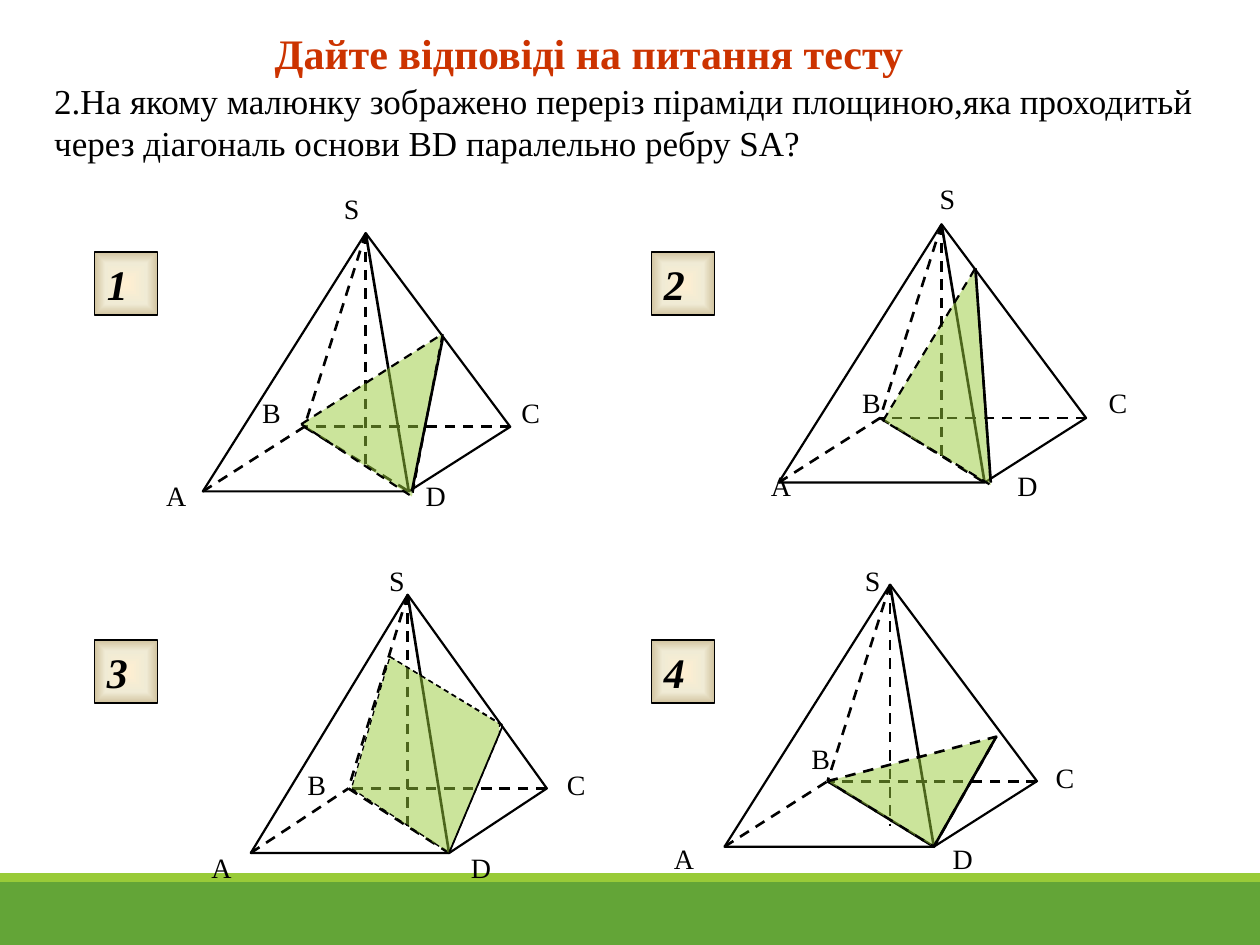
import lxml.etree
import pptx
import pptx.dml.color
import pptx.enum.dml
import pptx.enum.shapes
import pptx.enum.text
import pptx.oxml
import pptx.oxml.ns
import pptx.util

RGBColor = pptx.dml.color.RGBColor
Pt = pptx.util.Pt
qn = pptx.oxml.ns.qn
BLACK = RGBColor(0x00, 0x00, 0x00)
RED = RGBColor(0xCC, 0x33, 0x00)
GREEN = RGBColor(0x63, 0xA5, 0x37)
LIME = RGBColor(0x99, 0xCB, 0x38)
BUTTON_STOPS = (
    (0, RGBColor(0xFF, 0xEF, 0xD1)),
    (65000, RGBColor(0xF0, 0xEB, 0xD5)),
    (100000, RGBColor(0xD1, 0xC3, 0x9F)),
)
FONT = "Times New Roman"
DASH = pptx.enum.dml.MSO_LINE.DASH
WIDTH, HEIGHT = pptx.util.Inches(10), pptx.util.Inches(7.5)
COL, ROW = WIDTH / 100, HEIGHT / 75

VERTICES = {"A": (0, 1), "B": (0.33, 0.75), "C": (1, 0.75),
            "D": (0.67, 1), "S": (0.53, 0), "O": (0.53, 0.92)}
HIDDEN_EDGES = ("SB", "CB", "AB", "BD", "SO")
LABELS = {"A": (0, 1), "B": (0.27, 0.71), "C": (1, 0.71), "D": (0.73, 1), "S": (0.5, 0)}

FIGURES = [
    {"number": "1", "button": (7.5, 20), "box": (16.1, 18.5, 24.4, 20.5),
     "labels": (12.2, 14.7, 28.2, 22.8), "outline": 1.25,
     "section": [(0.32, 0.74), (0.78, 0.39), (0.68, 1.02)],
     "edges": [((0.68, 1), (0.78, 0.41), 1.5, None)]},
    {"number": "2", "button": (51.7, 20), "box": (61.8, 17.8, 24.4, 20.5),
     "labels": (60.2, 13.9, 26.8, 22.8), "outline": 1.25,
     "section": [(0.34, 0.76), (0.64, 0.17), (0.69, 1.01)],
     "edges": [((0.69, 1), (0.64, 0.17), 1.5, None)]},
    {"number": "3", "button": (7.5, 50.8), "box": (19.9, 47.2, 23.5, 20.5),
     "labels": (15.8, 44.2, 28.2, 22.8), "outline": 0,
     "section": [(0.47, 0.24), (0.84, 0.5), (0.84, 0.54), (0.67, 1), (0.34, 0.75)],
     "edges": [((0.67, 1), (0.85, 0.51), 1, None),
               ((0.47, 0.24), (0.86, 0.51), 0.75, DASH)]},
    {"number": "4", "button": (51.7, 50.8), "box": (57.5, 46.4, 24.8, 20.8),
     "labels": (52.5, 44.2, 30.3, 22.1), "outline": 1.5, "moved": {"B": (0.36, 0.64)},
     "section": [(0.33, 0.75), (0.87, 0.58), (0.67, 1)],
     "edges": [((0.67, 1), (0.87, 0.58), 1.5, None)]},
]


def place(x, y, w, h):
    return [round(v) for v in (x * COL, y * ROW, w * COL, h * ROW)]


def point(box, share):
    x, y, w, h = box
    return round(x + w * share[0]), round(y + h * share[1])


def write(tf, text, size, color=BLACK, bold=False, italic=False):
    p = tf.paragraphs[0]
    p.text = text
    p.alignment = pptx.enum.text.PP_ALIGN.LEFT
    p.space_before = Pt(0)
    p.font.name = FONT
    p.font.size = Pt(size)
    p.font.bold = bold
    p.font.italic = italic
    p.font.color.rgb = color
    return p


def style_line(line, width, dash=None):
    line.color.rgb = BLACK
    line.width = Pt(width)
    if dash:
        line.dash_style = dash


def add_edge(shapes, start, end, width, dash):
    sp = shapes.add_connector(pptx.enum.shapes.MSO_CONNECTOR.STRAIGHT, *start, *end)
    style_line(sp.line, width, dash)
    lxml.etree.SubElement(sp._element.spPr, qn("a:effectLst"))


def add_polygon(shapes, points, width, dash=None):
    builder = shapes.build_freeform(*points[0])
    builder.add_line_segments(points[1:], close=True)
    sp = builder.convert_to_shape()
    sp.shadow.inherit = False
    sp.fill.background()
    style_line(sp.line, width, dash)
    return sp


def add_heading(slide):
    texts = (
        (slide.shapes.title, (20.8, 1.7, 60, 5),
         "Дайте відповіді на питання тесту", 24, RED, True),
        (slide.placeholders[1], (3.3, 5.8, 94.2, 7.7),
         "2.На якому малюнку зображено переріз піраміди площиною,яка проходитьй "
         "через діагональ основи BD паралельно ребру SA?", 20, BLACK, False),
    )
    for sp, box, text, size, color, bold in texts:
        sp.left, sp.top, sp.width, sp.height = place(*box)
        tf = sp.text_frame
        tf.word_wrap = True
        tf.auto_size = pptx.enum.text.MSO_AUTO_SIZE.SHAPE_TO_FIT_TEXT
        tf.vertical_anchor = pptx.enum.text.MSO_ANCHOR.TOP
        p = write(tf, text, size, color, bold)
        pPr = p._p.get_or_add_pPr()
        pPr.set("marL", "0")
        pPr.set("indent", "0")
        spacing = pPr.find(qn("a:spcBef"))
        spacing.addnext(pptx.oxml.parse_xml(
            f'<a:buNone {pptx.oxml.ns.nsdecls("a")}/>'))


def add_footer_band(slide):
    for box, color in (((0, 70, 100, 5), GREEN), ((0, 69.3, 100, 0.7), LIME)):
        sp = slide.shapes.add_shape(pptx.enum.shapes.MSO_SHAPE.RECTANGLE, *place(*box))
        sp.shadow.inherit = False
        sp.fill.solid()
        sp.fill.fore_color.rgb = color
        sp.line.fill.background()


def add_pyramid(slide, box, section, outline, edges):
    shapes = slide.shapes.add_group_shape().shapes
    v = {name: point(box, share) for name, share in VERTICES.items()}
    add_polygon(shapes, [v[name] for name in "ASCD"], 1.25)
    add_edge(shapes, v["S"], v["D"], 1.5, None)
    for start, end in HIDDEN_EDGES:
        add_edge(shapes, v[start], v[end], 1.5, DASH)
    sp = add_polygon(shapes, [point(box, share) for share in section], outline, DASH)
    sp.fill.solid()
    sp.fill.fore_color.rgb = LIME
    color = sp._element.spPr.find(qn("a:solidFill"))[0]
    lxml.etree.SubElement(color, qn("a:alpha")).set("val", "50000")
    for start, end, width, dash in edges:
        add_edge(shapes, point(box, start), point(box, end), width, dash)


def add_labels(slide, box, moved):
    for name, share in {**LABELS, **moved}.items():
        size = place(0, 0, 5.5, 3.7)[2:]
        tf = slide.shapes.add_textbox(*point(box, share), *size).text_frame
        tf.word_wrap = True
        write(tf, name, 16)


def add_button(slide, box, number):
    sp = slide.shapes.add_shape(pptx.enum.shapes.MSO_SHAPE.ACTION_BUTTON_CUSTOM, *box)
    sp.shadow.inherit = False
    style_line(sp.line, 0.75)
    stops = "".join(f'<a:gs pos="{pos}"><a:srgbClr val="{color}"/></a:gs>'
                    for pos, color in BUTTON_STOPS)
    sp._element.spPr.find(qn("a:prstGeom")).addnext(pptx.oxml.parse_xml(
        f'<a:gradFill {pptx.oxml.ns.nsdecls("a")}><a:gsLst>{stops}</a:gsLst>'
        '<a:path path="rect"><a:fillToRect l="50000" t="50000" r="50000" b="50000"/>'
        '</a:path></a:gradFill>'))
    tf = sp.text_frame
    tf.word_wrap = False
    tf.vertical_anchor = pptx.enum.text.MSO_ANCHOR.MIDDLE
    write(tf, number, 24, bold=True, italic=True)


def main():
    prs = pptx.Presentation()
    prs.slide_width, prs.slide_height = WIDTH, HEIGHT
    slide = prs.slides.add_slide(prs.slide_layouts[1])
    add_heading(slide)
    add_footer_band(slide)
    for figure in FIGURES:
        add_pyramid(slide, place(*figure["box"]), figure["section"],
                    figure["outline"], figure["edges"])
        add_labels(slide, place(*figure["labels"]), figure.get("moved", {}))
        add_button(slide, place(*figure["button"], 5, 5), figure["number"])
    prs.save("out.pptx")


if __name__ == "__main__":
    main()
